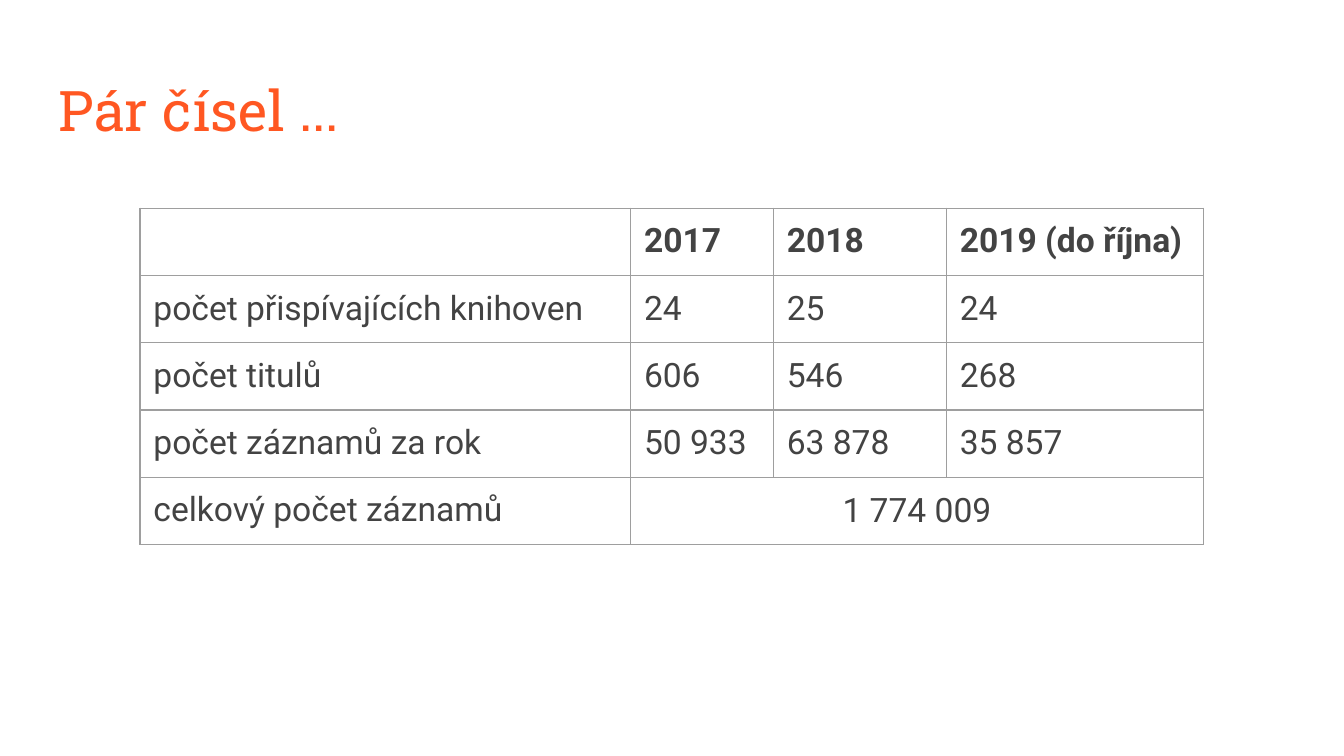
import pptx
import pptx.dml.color
import pptx.enum.text
import pptx.oxml
import pptx.oxml.ns
import pptx.util

Pt = pptx.util.Pt
PP_ALIGN = pptx.enum.text.PP_ALIGN
MSO_ANCHOR = pptx.enum.text.MSO_ANCHOR

# Content
TITLE = "Pár čísel ..."
ROWS = [
    ["", "2017", "2018", "2019 (do října)"],
    ["počet přispívajících knihoven", "24", "25", "24"],
    ["počet titulů", "606", "546", "268"],
    ["počet záznamů za rok", "50 933", "63 878", "35 857"],
    ["celkový počet záznamů", "1 774 009"],
]

# Layout and formats, in points
COLORS = {"title": "FF5722", "text": "434343", "border": "9E9E9E"}
COLUMN_WIDTHS = [262.8, 76.5, 92.7, 137.7]
ROW_HEIGHT = 35.5
TABLE_LEFT, TABLE_TOP = 75, 111.6
BORDER_WIDTH = 0.75
TITLE_BOX = (24.5, 35.3, 671, 45.4)
TITLE_FONT = {"name": "Roboto Slab", "size": Pt(30), "bold": False}
CELL_FONT = {"name": "Roboto", "size": Pt(18), "bold": False}
HEADER_FONT = {**CELL_FONT, "bold": True}
CELL_MARGINS = {f"margin_{side}": Pt(7.2) for side in ("left", "top", "right", "bottom")}
TITLE_FRAME = {**CELL_MARGINS, "margin_top": Pt(5), "word_wrap": True,
               "vertical_anchor": MSO_ANCHOR.TOP}


def set_attributes(target, values):
    for name, value in values.items():
        setattr(target, name, value)


def write_text(paragraph, text, font, color):
    paragraph.text = text
    set_attributes(paragraph.font, font)
    paragraph.font.color.rgb = pptx.dml.color.RGBColor.from_string(COLORS[color])
    for run in paragraph.runs:
        set_attributes(run.font, font)
        run.font.color.rgb = pptx.dml.color.RGBColor.from_string(COLORS[color])


def add_borders(cell):
    properties = cell._tc.get_or_add_tcPr()
    for position, tag in enumerate(("lnL", "lnR", "lnT", "lnB")):
        line = pptx.oxml.parse_xml(
            f'<a:{tag} {pptx.oxml.ns.nsdecls("a")} w="{Pt(BORDER_WIDTH)}">'
            f'<a:solidFill><a:srgbClr val="{COLORS["border"]}"/></a:solidFill></a:{tag}>')
        properties.insert(position, line)


def add_title(slide):
    text_frame = slide.shapes.add_textbox(*map(Pt, TITLE_BOX)).text_frame
    set_attributes(text_frame, TITLE_FRAME)
    write_text(text_frame.paragraphs[0], TITLE, TITLE_FONT, "title")


def add_numbers_table(slide):
    table = slide.shapes.add_table(
        len(ROWS), len(COLUMN_WIDTHS), Pt(TABLE_LEFT), Pt(TABLE_TOP),
        Pt(sum(COLUMN_WIDTHS)), Pt(ROW_HEIGHT * len(ROWS))).table
    set_attributes(table, {"first_row": False, "horz_banding": False})
    for column, width in zip(table.columns, COLUMN_WIDTHS):
        column.width = Pt(width)

    for row_index, row in enumerate(ROWS):
        table.rows[row_index].height = Pt(ROW_HEIGHT)
        font = CELL_FONT if row_index else HEADER_FONT
        for column_index in range(len(COLUMN_WIDTHS)):
            cell = table.cell(row_index, column_index)
            cell.fill.background()
            set_attributes(cell, CELL_MARGINS)
            add_borders(cell)
            if column_index < len(row):
                write_text(cell.text_frame.paragraphs[0], row[column_index], font, "text")

    # The total spans all years
    last_row = len(ROWS) - 1
    total = table.cell(last_row, 1)
    total.merge(table.cell(last_row, len(COLUMN_WIDTHS) - 1))
    total.vertical_anchor = MSO_ANCHOR.MIDDLE
    total.text_frame.paragraphs[0].alignment = PP_ALIGN.CENTER


def main():
    presentation = pptx.Presentation()
    set_attributes(presentation, {"slide_width": Pt(720), "slide_height": Pt(405)})
    slide = presentation.slides.add_slide(presentation.slide_layouts[6])
    add_title(slide)
    add_numbers_table(slide)
    presentation.save("out.pptx")


if __name__ == "__main__":
    main()
